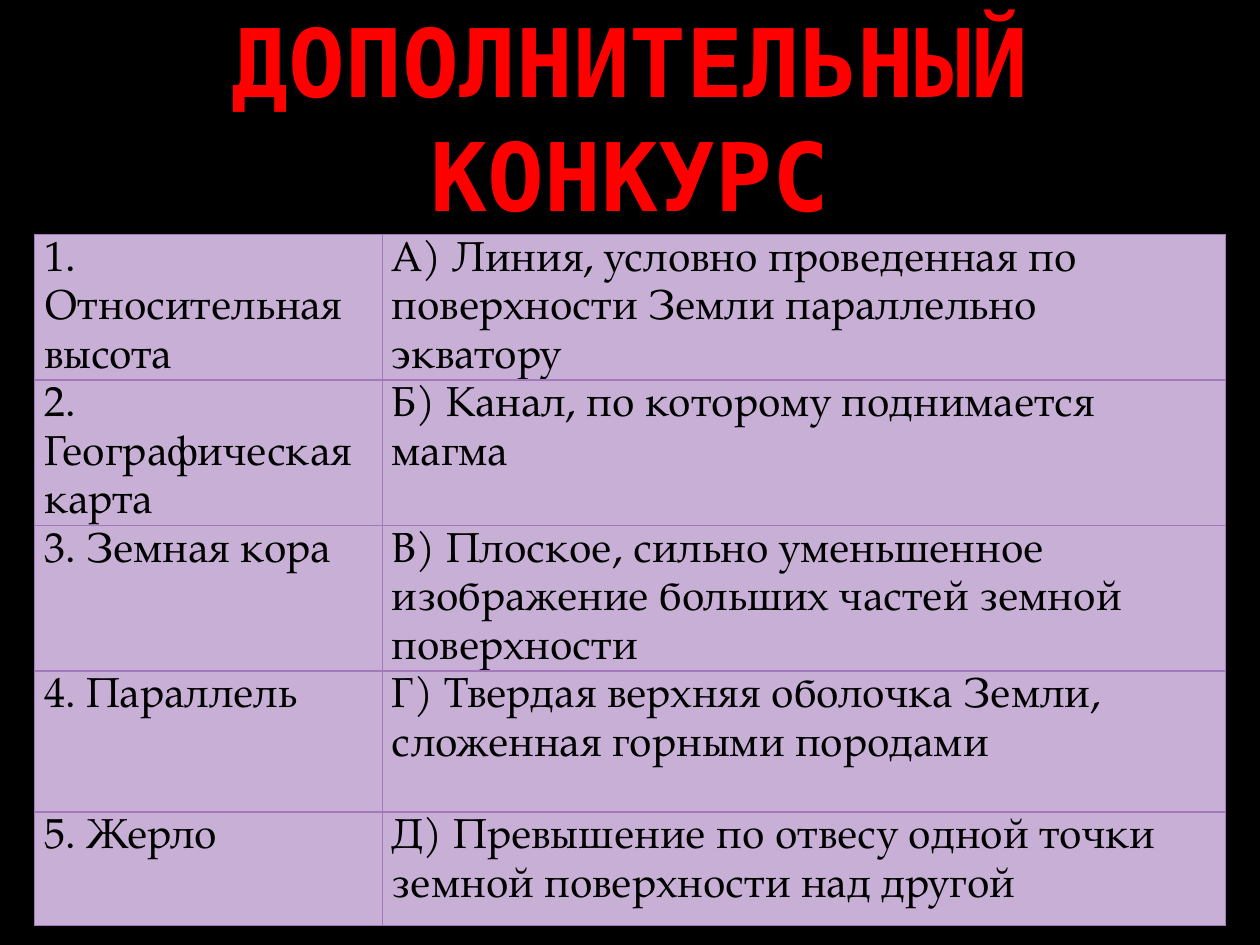
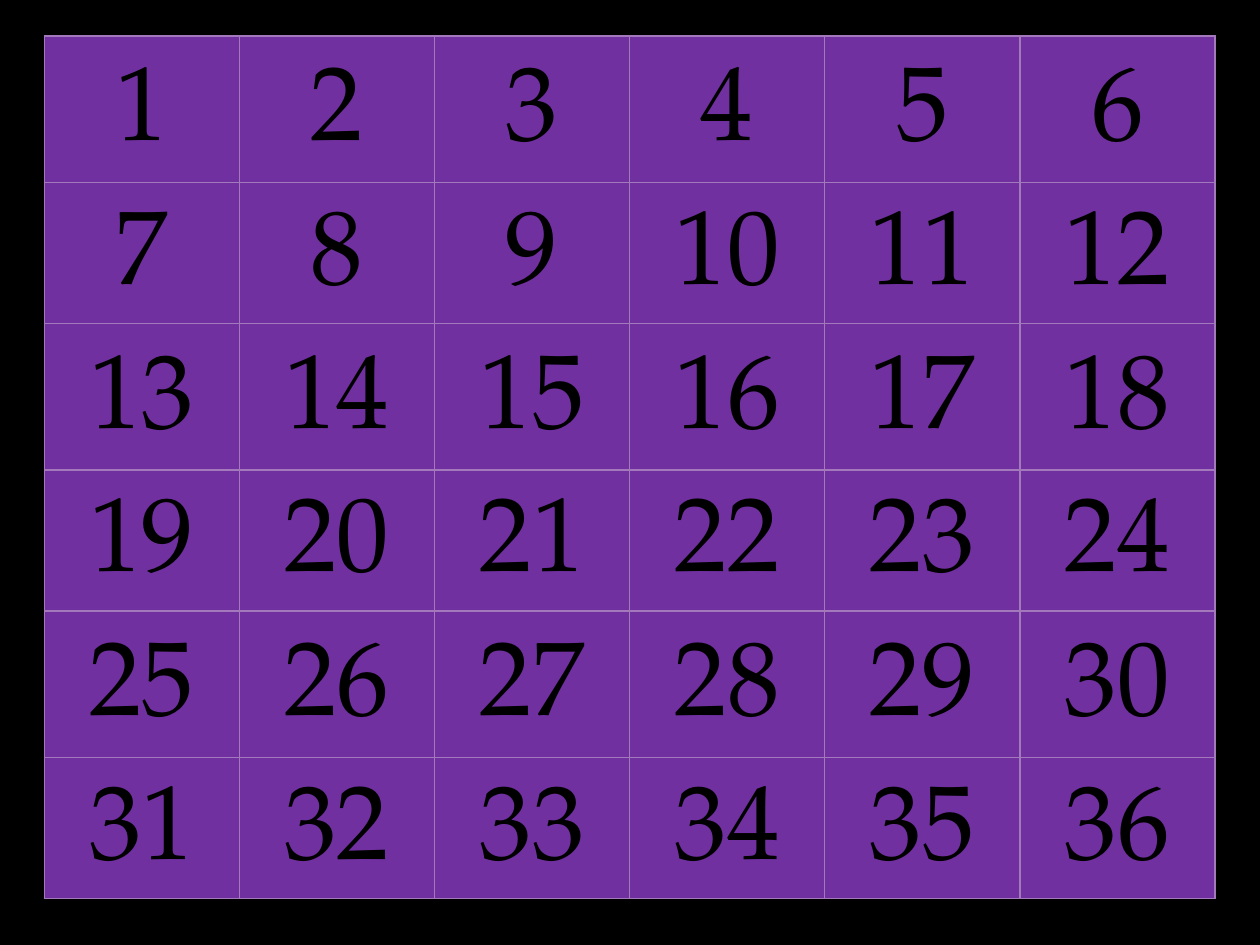
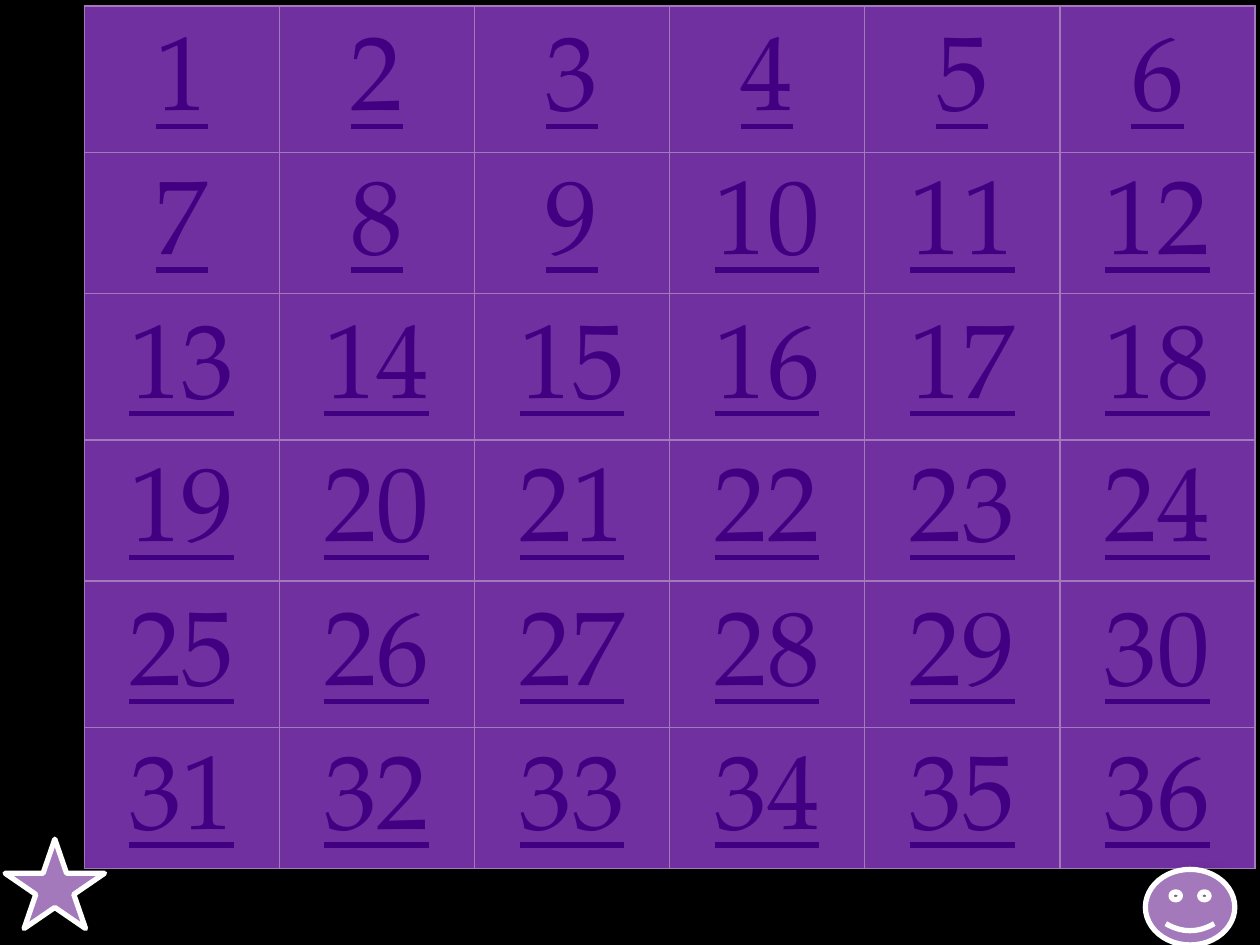
from lxml import etree
from pptx import Presentation
from pptx import util as u
from pptx.dml.color import RGBColor
from pptx.enum import shapes, text
from pptx.oxml import ns

# Content
CONTEST_TITLE = "ДОПОЛНИТЕЛЬНЫЙ КОНКУРС"
TERMS = [
    ("1. Относительная высота",
     "А) Линия, условно проведенная по поверхности Земли параллельно экватору"),
    ("2. Географическая карта",
     "Б) Канал, по которому поднимается магма"),
    ("3. Земная кора",
     "В) Плоское, сильно уменьшенное изображение больших частей земной поверхности"),
    ("4. Параллель",
     "Г) Твердая верхняя оболочка Земли, сложенная горными породами"),
    ("5. Жерло",
     "Д) Превышение по отвесу одной точки земной поверхности над другой"),
]
GRID_SIDE = 6
NUMBERS = [[str(row * GRID_SIDE + column + 1) for column in range(GRID_SIDE)]
           for row in range(GRID_SIDE)]
BADGES = [
    (shapes.MSO_SHAPE.STAR_5_POINT, (2.9, 479.5, 56.9, 51.1)),
    (shapes.MSO_SHAPE.SMILEY_FACE, (654.5, 496.8, 51.1, 43.2)),
]

# Shared look
COLORS = {
    "background": "000000", "title": "FF0000", "ink": "000000", "link": "410082",
    "lilac": "C8AFD6", "violet": "7030A0", "accent": "A379BB",
    "outline": "7E4E99", "white": "FFFFFF",
}
TITLE_FONT = {"name": "DejaVu Sans Mono", "size": u.Pt(54), "bold": True}
TERM_FONT = {"name": "TeX Gyre Pagella", "size": u.Pt(24)}
NUMBER_FONT = {"name": "TeX Gyre Pagella", "size": u.Pt(60)}
LINK_FONT = {**NUMBER_FONT, "underline": True}
TERM_PARAGRAPH = {"line_spacing": 1.15, "space_after": u.Pt(10)}
NUMBER_PARAGRAPH = {"line_spacing": 1.15, "alignment": text.PP_ALIGN.CENTER}
TERM_CELL = {"margin_left": u.Pt(5.4), "margin_right": u.Pt(5.4),
             "margin_top": 0, "margin_bottom": 0}
NUMBER_CELL = {f"margin_{side}": u.Pt(0.75)
               for side in ("left", "right", "top", "bottom")}
NUMBER_CELL["vertical_anchor"] = text.MSO_ANCHOR.MIDDLE
TERM_COLUMNS = (198.7, 481.7)
TERM_ROWS = (80.6, 53.3, 80.6, 80.6, 64.8)
NUMBER_COLUMNS = (111.5,) * GRID_SIDE
NUMBER_ROWS = (83.7, 80.6) * (GRID_SIDE // 2)


def color(key):
    return RGBColor.from_string(COLORS[key])


def apply(target, values):
    for name, value in values.items():
        setattr(target, name, value)


def fill_solid(target, key):
    target.fill.solid()
    target.fill.fore_color.rgb = color(key)


def line_xml(tag, key, width):
    line = etree.Element(ns.qn(tag), w=str(u.Pt(width)))
    solid = etree.SubElement(line, ns.qn("a:solidFill"))
    etree.SubElement(solid, ns.qn("a:srgbClr"), val=COLORS[key])
    return line


def add_grid(slide, rows, corner, widths, heights, fill, ink,
             font, paragraph_format, cell_format, outline=None):
    left, top = corner
    frame = slide.shapes.add_table(
        len(rows), len(widths), u.Pt(left), u.Pt(top),
        u.Pt(sum(widths)), u.Pt(sum(heights)))
    grid = frame.table
    apply(grid, {"first_row": False, "horz_banding": False})
    for column, width in zip(grid.columns, widths):
        column.width = u.Pt(width)
    for row, height, words in zip(grid.rows, heights, rows):
        row.height = u.Pt(height)
        for cell, word in zip(row.cells, words):
            apply(cell, cell_format)
            fill_solid(cell, fill)
            properties = cell._tc.get_or_add_tcPr()
            for place, side in enumerate("LRTB"):
                properties.insert(place, line_xml(f"a:ln{side}", "accent", 1))
            paragraph = cell.text_frame.paragraphs[0]
            apply(paragraph, paragraph_format)
            run = paragraph.add_run()
            run.text = word
            apply(run.font, font)
            run.font.color.rgb = color(ink)
            if outline:
                run._r.get_or_add_rPr().insert(0, line_xml("a:ln", outline, 0.75))


def add_number_grid(slide, corner, ink, font):
    add_grid(slide, NUMBERS, corner, NUMBER_COLUMNS, NUMBER_ROWS, "violet", ink,
             font, NUMBER_PARAGRAPH, NUMBER_CELL)


def add_badge(slide, preset, box):
    badge = slide.shapes.add_shape(preset, *map(u.Pt, box))
    fill_solid(badge, "accent")
    badge.line.color.rgb = color("white")
    badge.line.width = u.Pt(3)
    badge.shadow.inherit = False
    effects = badge._element.spPr.find(ns.qn("a:effectLst"))
    shadow = etree.SubElement(
        effects, ns.qn("a:outerShdw"), blurRad=str(u.Pt(10.2)), dist=str(u.Pt(8)),
        dir=str(45 * 60000), algn="tl", rotWithShape="0")
    shade = etree.SubElement(shadow, ns.qn("a:srgbClr"), val=COLORS["background"])
    etree.SubElement(shade, ns.qn("a:alpha"), val="35000")


def main():
    deck = Presentation()
    apply(deck, {"slide_width": u.Pt(720), "slide_height": u.Pt(540)})
    fill_solid(deck.slide_master.background, "background")
    title_only, blank = deck.slide_layouts[5], deck.slide_layouts[6]

    # Matching terms with definitions
    contest = deck.slides.add_slide(title_only)
    title = contest.shapes.title
    apply(title, {"left": u.Pt(36), "top": u.Pt(21.6),
                  "width": u.Pt(648), "height": u.Pt(90)})
    apply(title.text_frame, {"text": CONTEST_TITLE, "word_wrap": True,
                             "auto_size": text.MSO_AUTO_SIZE.NONE,
                             "vertical_anchor": text.MSO_ANCHOR.MIDDLE})
    heading = title.text_frame.paragraphs[0]
    heading.alignment = text.PP_ALIGN.CENTER
    heading_font = heading.runs[0].font
    apply(heading_font, TITLE_FONT)
    heading_font.color.rgb = color("title")
    add_grid(contest, TERMS, (19.8, 133.9), TERM_COLUMNS, TERM_ROWS, "lilac", "ink",
             TERM_FONT, TERM_PARAGRAPH, TERM_CELL, "outline")

    # Plain number board
    add_number_grid(deck.slides.add_slide(blank), (25.3, 20.7), "ink", NUMBER_FONT)

    # Underlined number board with badges
    board = deck.slides.add_slide(blank)
    add_number_grid(board, (48.2, 3.5), "link", LINK_FONT)
    for preset, box in BADGES:
        add_badge(board, preset, box)

    deck.save("out.pptx")


if __name__ == "__main__":
    main()
